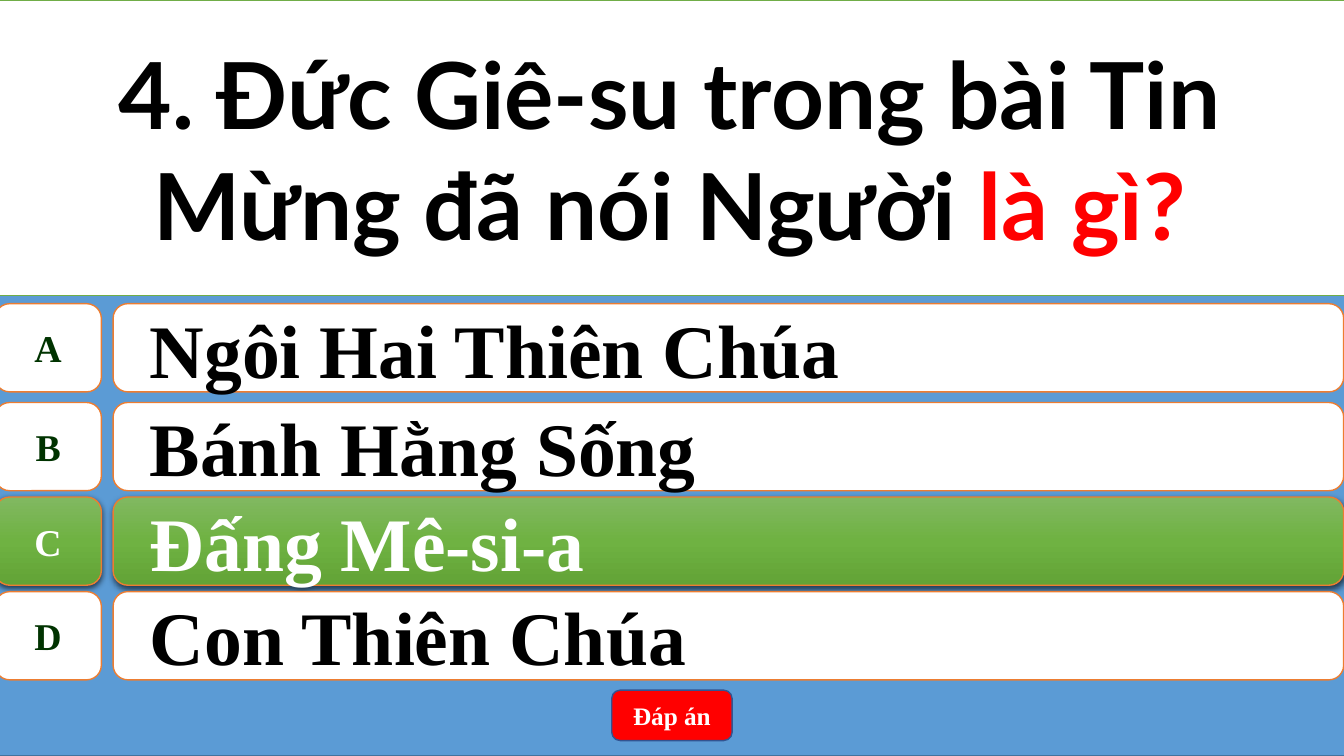
"""Build a quiz slide: a question, four lettered answers with the right one lit, and an answer button."""
from lxml import etree
from pptx import Presentation
from pptx import util as u
from pptx.dml.color import RGBColor
from pptx.enum import shapes, text
from pptx.oxml import parse_xml
from pptx.oxml.ns import qn

COLORS = {
    "white": "FFFFFF", "black": "000000", "red": "FF0000", "blue": "5B9BD5",
    "blue_edge": "43739E", "button_edge": "325491", "orange": "ED7D31",
    "green_edge": "70AD47", "letter": "003300",
    "lit_top": "81B861", "lit_middle": "6FB242", "lit_bottom": "62A336",
}
SERIF = "Times New Roman"
DRAWING_NS = 'xmlns:a="http://schemas.openxmlformats.org/drawingml/2006/main"'
STOPS = "".join(
    f'<a:gs pos="{position}"><a:srgbClr val="{COLORS[name]}"/></a:gs>'
    for position, name in ((0, "lit_top"), (50000, "lit_middle"), (100000, "lit_bottom"))
)
LIT_FILL = f'<a:gradFill {DRAWING_NS} rotWithShape="1"><a:gsLst>{STOPS}</a:gsLst><a:lin ang="5400000" scaled="0"/></a:gradFill>'
LIT_SHADOW = (
    f'<a:outerShdw {DRAWING_NS} blurRad="57150" dist="19050" dir="5400000" algn="ctr" rotWithShape="0">'
    f'<a:srgbClr val="{COLORS["black"]}"><a:alpha val="63000"/></a:srgbClr></a:outerShdw>'
)

deck = Presentation()
deck.slide_width, deck.slide_height = u.Pt(960), u.Pt(540)
slide = deck.slides.add_slide(deck.slide_layouts[6])


def add_panel(kind, box, fill, edge):
    panel = slide.shapes.add_shape(kind, *(u.Pt(length) for length in box))
    panel.shadow.inherit = False
    panel.fill.solid()
    panel.fill.fore_color.rgb = RGBColor.from_string(COLORS[fill])
    panel.line.color.rgb = RGBColor.from_string(COLORS[edge])
    panel.line.width = u.Pt(1)
    return panel


def write(panel, wording, color, size, face, align=text.PP_ALIGN.CENTER):
    panel.text_frame.vertical_anchor = text.MSO_ANCHOR.MIDDLE
    paragraph = panel.text_frame.paragraphs[0]
    paragraph.alignment = align
    run = paragraph.add_run()
    run.text = wording
    for attribute, value in {"size": u.Pt(size), "name": face, "bold": True}.items():
        setattr(run.font, attribute, value)
    run.font.color.rgb = RGBColor.from_string(COLORS[color])
    return paragraph


add_panel(shapes.MSO_SHAPE.RECTANGLE, (-3.6, 0, 964, 540), "blue", "blue_edge")

answers = [
    ("A", "Ngôi Hai Thiên Chúa", 216.9),
    ("B", "Bánh Hằng Sống", 287.5),
    ("C", "Đấng Mê-si-a", 355),
    ("D", "Con Thiên Chúa", 422.6),
]
for letter, answer, top in answers:
    lit = letter == "C"
    letter_panel = add_panel(
        shapes.MSO_SHAPE.FLOWCHART_ALTERNATE_PROCESS, (-3.6, top, 76, 63), "white", "orange")
    write(letter_panel, letter, "white" if lit else "letter", 27, SERIF)
    letter_panel.text_frame.word_wrap = False

    answer_panel = add_panel(
        shapes.MSO_SHAPE.ROUNDED_RECTANGLE, (80.8, top, 879, 63), "white", "orange")
    answer_line = write(
        answer_panel, answer, "white" if lit else "black", 54, SERIF, text.PP_ALIGN.LEFT)
    answer_line.level = 1
    for attribute, value in {"marL": u.Pt(36), "indent": u.Pt(-20)}.items():
        answer_line._p.get_or_add_pPr().set(attribute, str(value))

    if lit:
        for panel in (letter_panel, answer_panel):
            properties = panel._element.spPr
            properties.replace(properties.find(qn("a:solidFill")), parse_xml(LIT_FILL))
            properties.find(qn("a:effectLst")).append(etree.fromstring(LIT_SHADOW))

button = add_panel(shapes.MSO_SHAPE.ROUNDED_RECTANGLE, (437, 493, 86, 36), "red", "button_edge")
write(button, "Đáp án", "white", 18, SERIF)

question = add_panel(shapes.MSO_SHAPE.RECTANGLE, (-3.6, 0, 964, 211), "white", "green_edge")
write(question, "4. Đức Giê-su trong bài Tin Mừng đã nói Người ", "black", 66, "Lato")
write(question, "là gì?", "red", 66, "Lato")

deck.save("out.pptx")
